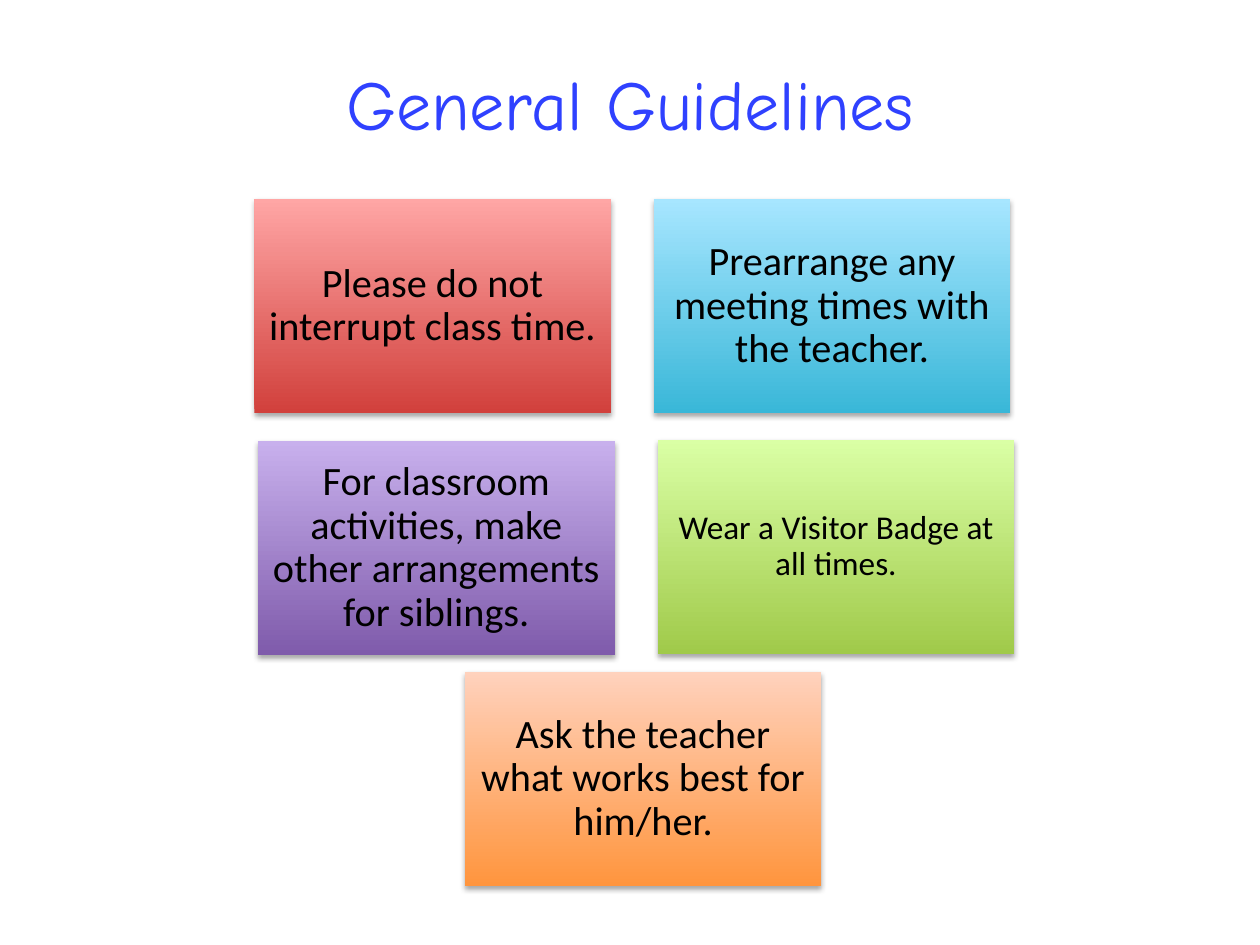
from dataclasses import dataclass

from lxml.etree import SubElement
from pptx import Presentation
from pptx.dml.color import RGBColor
from pptx.enum.shapes import MSO_SHAPE
from pptx.enum.text import MSO_ANCHOR, PP_ALIGN
from pptx.oxml.ns import qn
from pptx.util import Inches, Pt


@dataclass(frozen=True)
class Theme:
    head: str = "Comic Neue"
    body: str = "Calibri"
    blue: str = "2F41FF"
    ink: str = "000000"
    red: tuple = ("D1403C", "FFA6A5")
    sky: tuple = ("39B7D8", "A7E6FF")
    plum: tuple = ("7F5BAB", "C8B0ED")
    lime: tuple = ("A0CA4A", "DAFFA5")
    peach: tuple = ("FF953E", "FFD2BD")
    big: int = 40
    mid: int = 23
    small: int = 19


THEME = Theme()
WIDE, HIGH = 2.83, 1.7
CARDS = [
    (2.02, 1.58, THEME.red, THEME.mid, "Please do not interrupt class time."),
    (5.22, 3.49, THEME.lime, THEME.small, "Wear a Visitor Badge at all times."),
    (2.05, 3.5, THEME.plum, THEME.mid,
     "For classroom activities, make other arrangements for siblings."),
    (5.19, 1.58, THEME.sky, THEME.mid,
     "Prearrange any meeting times with the teacher."),
    (3.69, 5.33, THEME.peach, THEME.mid,
     "Ask the teacher what works best for him/her."),
]


def write(frame, text, font, size, color, pad=0.1, lead=1.0):
    frame.word_wrap = True
    frame.vertical_anchor = MSO_ANCHOR.MIDDLE
    frame.margin_left = frame.margin_right = Inches(pad)
    frame.margin_top = frame.margin_bottom = Inches(pad)
    para = frame.paragraphs[0]
    para.alignment = PP_ALIGN.CENTER
    para.line_spacing = lead
    run = para.add_run()
    run.text = text
    run.font.name = font
    run.font.size = Pt(size)
    run.font.color.rgb = RGBColor.from_string(color)


def shade(shape):
    shape.shadow.inherit = False
    effect = shape._element.spPr.find(qn("a:effectLst"))
    drop = SubElement(effect, qn("a:outerShdw"), blurRad=str(Pt(3.1)),
                      dist=str(Pt(1.8)), dir="5400000", rotWithShape="0")
    tint = SubElement(drop, qn("a:srgbClr"), val=THEME.ink)
    SubElement(tint, qn("a:alpha"), val="35000")


def add_title(slide, left, top, width, height):
    title = slide.shapes.title
    title.left, title.top = Inches(left), Inches(top)
    title.width, title.height = Inches(width), Inches(height)
    write(title.text_frame, "General Guidelines", font=THEME.head,
          size=THEME.big, color=THEME.blue, pad=0.05)


def add_card(slide, left, top, width, height, tones, size, text):
    card = slide.shapes.add_shape(MSO_SHAPE.RECTANGLE, Inches(left), Inches(top),
                                  Inches(width), Inches(height))
    card.fill.gradient()
    card.fill.gradient_angle = 90
    for stop, tone in zip(card.fill.gradient_stops, tones):
        stop.color.rgb = RGBColor.from_string(tone)
    card.line.fill.background()
    shade(card)
    write(card.text_frame, text, font=THEME.body, size=size, color=THEME.ink,
          pad=0.1 if size == THEME.mid else 0.08, lead=0.9)


def main():
    deck = Presentation()
    deck.slide_width, deck.slide_height = Inches(10), Inches(7.5)
    slide = deck.slides.add_slide(deck.slide_layouts.get_by_name("Title Only"))
    add_title(slide, 0.5, 0.3, 9, 1.03)
    for left, top, tones, size, text in CARDS:
        add_card(slide, left, top, WIDE, HIGH, tones, size, text)
    deck.save("out.pptx")


if __name__ == "__main__":
    main()
